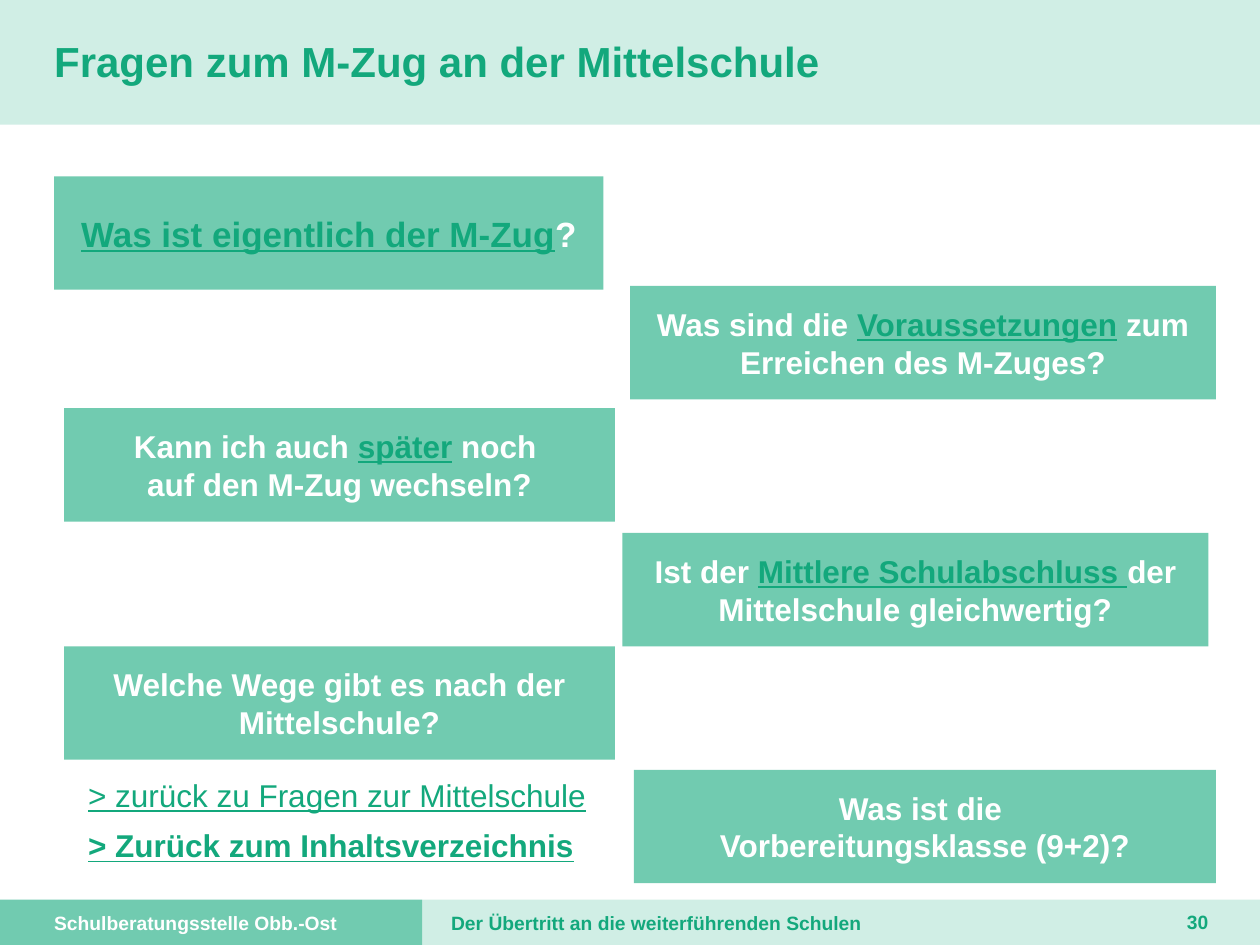
import pptx
import pptx.dml.color
import pptx.enum.shapes
import pptx.enum.text
import pptx.util
from pptx.util import Inches

COLORS = {"green": "13A87C", "mint": "71CBB0", "pale": "D0EEE5", "white": "FFFFFF"}
ALIGN = pptx.enum.text.PP_ALIGN
ANCHOR = pptx.enum.text.MSO_ANCHOR

CARD_HEIGHT = 0.9
LINE_BREAK = "\n"

# Left, top, width, font size, paragraphs of (text, is underlined)
CARDS = [
    (4.94, 4.23, 4.65, 18, [[("Ist der ", False), ("Mittlere Schulabschluss ", True),
                             ("der Mittelschule gleichwertig?", False)]]),
    (0.51, 3.24, 4.37, 18, [[("Kann ich auch ", False), ("später", True), (" noch ", False)],
                            [("auf den M-Zug wechseln?", False)]]),
    (5, 2.27, 4.65, 18, [[("Was sind die ", False), ("Voraussetzungen", True),
                          (" zum Erreichen des M-Zuges?", False)]]),
    (0.43, 1.4, 4.36, 20, [[("Was ist eigentlich der M-Zug", True), ("?", False)]]),
    (0.51, 5.13, 4.37, 18, [[("Welche Wege gibt es nach der Mittelschule?", False)]]),
    (5.03, 6.11, 4.62, 18, [[("Was ist die ", False), (LINE_BREAK, False),
                             ("Vorbereitungsklasse (9+2)?", False)]]),
]


def color(name):
    return pptx.dml.color.RGBColor.from_string(COLORS[name])


def set_margins(frame, horizontal, vertical):
    frame.margin_left = frame.margin_right = Inches(horizontal)
    frame.margin_top = frame.margin_bottom = Inches(vertical)


def style_font(font, size, color_name, bold=True):
    font.name = "Arial"
    font.size = pptx.util.Pt(size)
    font.bold = bold
    font.color.rgb = color(color_name)


def add_block(slide, left, top, width, height, fill):
    shape = slide.shapes.add_shape(
        pptx.enum.shapes.MSO_SHAPE.RECTANGLE,
        Inches(left), Inches(top), Inches(width), Inches(height))
    shape.shadow.inherit = False
    shape.fill.solid()
    shape.fill.fore_color.rgb = color(fill)
    shape.line.fill.background()
    return shape


def add_label(slide, left, top, width, height, text, size, color_name="green",
              alignment=ALIGN.LEFT):
    box = slide.shapes.add_textbox(Inches(left), Inches(top), Inches(width), Inches(height))
    frame = box.text_frame
    frame.word_wrap = True
    frame.vertical_anchor = ANCHOR.MIDDLE
    set_margins(frame, 0, 0)
    paragraph = frame.paragraphs[0]
    paragraph.text = text
    paragraph.alignment = alignment
    style_font(paragraph.font, size, color_name)


def add_back_link(slide, top, width, text, bold):
    box = slide.shapes.add_textbox(Inches(0.6), Inches(top), Inches(width), Inches(0.4))
    frame = box.text_frame
    frame.word_wrap = False
    set_margins(frame, 0.1, 0.05)
    paragraph = frame.paragraphs[0]
    paragraph.text = text
    style_font(paragraph.font, 18, "green", bold)
    paragraph.font.underline = True


def add_card(slide, left, top, width, size, paragraphs):
    frame = add_block(slide, left, top, width, CARD_HEIGHT, "mint").text_frame
    frame.word_wrap = True
    frame.vertical_anchor = ANCHOR.MIDDLE
    set_margins(frame, 0.08, 0.08)
    for index, segments in enumerate(paragraphs):
        paragraph = frame.add_paragraph() if index else frame.paragraphs[0]
        paragraph.alignment = ALIGN.CENTER
        style_font(paragraph.font, size, "white")
        for text, underlined in segments:
            if text == LINE_BREAK:
                paragraph.add_line_break()
                continue
            run = paragraph.add_run()
            run.text = text
            style_font(run.font, size, "green" if underlined else "white")
            run.font.underline = underlined


def main():
    presentation = pptx.Presentation()
    presentation.slide_width = Inches(10)
    presentation.slide_height = Inches(7.5)
    slide = presentation.slides.add_slide(presentation.slide_layouts[6])

    # Header and footer bands
    add_block(slide, 0, -0.02, 10, 1.01, "pale")
    add_block(slide, 3.35, 7.14, 6.65, 0.36, "pale")
    add_block(slide, 0, 7.14, 3.35, 0.36, "mint")

    # Footer texts and page number
    add_label(slide, 3.58, 7.23, 5.28, 0.19,
              "Der Übertritt an die weiterführenden Schulen", 11)
    add_label(slide, 0.43, 7.23, 2.74, 0.19, "Schulberatungsstelle Obb.-Ost", 11, "white")
    add_label(slide, 8.86, 7.22, 0.73, 0.2, "30", 11, alignment=ALIGN.RIGHT)

    # Title
    add_label(slide, 0.43, 0.13, 7.5, 0.71, "Fragen zum M-Zug an der Mittelschule", 24)

    # Question cards
    for card in CARDS:
        add_card(slide, *card)

    # Ways back
    add_back_link(slide, 6.11, 4.19, "> zurück zu Fragen zur Mittelschule", False)
    add_back_link(slide, 6.51, 4.09, "> Zurück zum Inhaltsverzeichnis", True)

    presentation.save("out.pptx")


if __name__ == "__main__":
    main()
